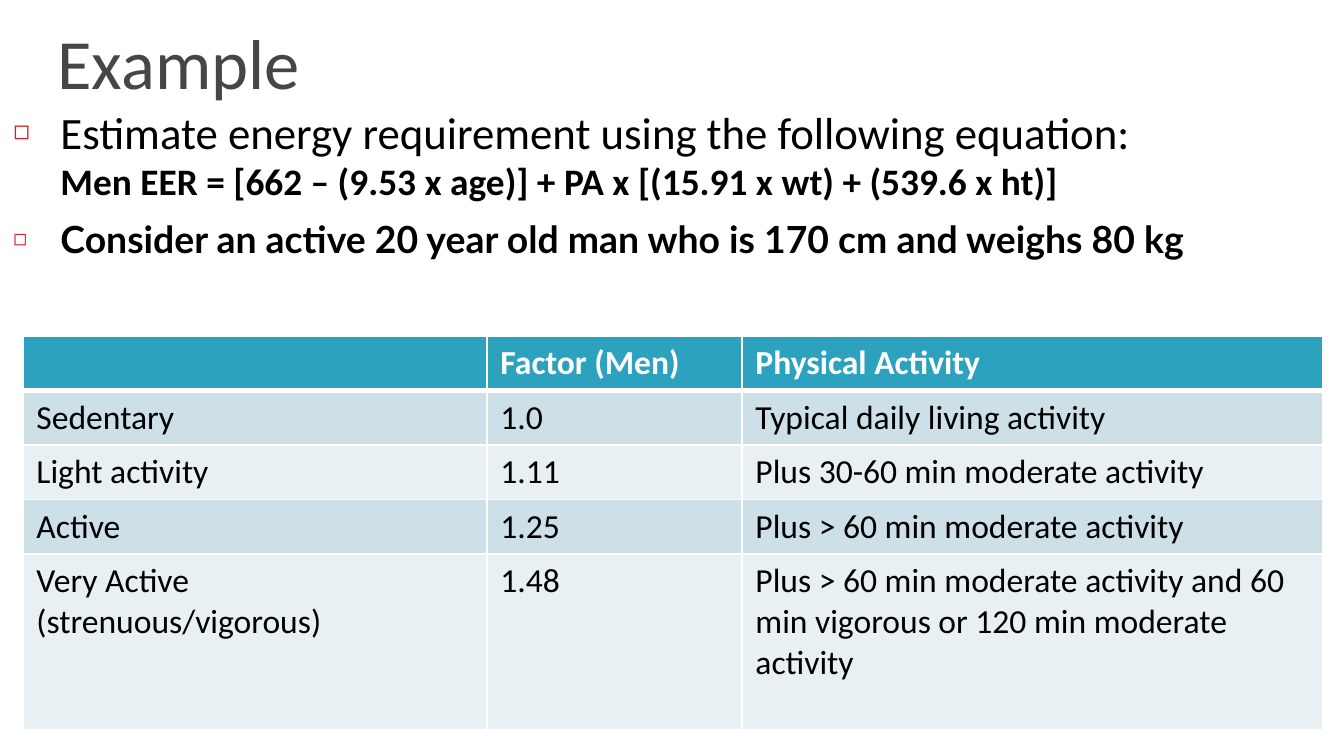
from lxml import etree
from pptx import Presentation, util as u
from pptx.dml.color import RGBColor
from pptx.enum import text
from pptx.oxml.ns import qn

PX = 914400 / 134.4
HEADER, BANDS = "2DA2BF", ("CDE0E8", "E8F0F4")
ROWS = [
    ("", "Factor (Men)", "Physical Activity"),
    ("Sedentary", "1.0", "Typical daily living activity"),
    ("Light activity", "1.11", "Plus 30-60 min moderate activity"),
    ("Active", "1.25", "Plus > 60 min moderate activity"),
    ("Very Active (strenuous/vigorous)", "1.48",
     "Plus > 60 min moderate activity and 60 min vigorous or 120 min moderate activity"),
]
BULLETS = [
    [("Estimate energy requirement using the following equation:",
      dict(size=24, name="Calibri", bold=False)),
     ("Men EER = [662 – (9.53 x age)] + PA x [(15.91 x wt) + (539.6 x ht)]",
      dict(size=20, name="Calibri", bold=True))],
    [("Consider an active 20 year old man who is 170 cm and weighs 80 kg",
      dict(size=20, name="Lato", bold=True))],
]


def px(n):
    """Turn slide pixels into EMU."""
    return u.Emu(round(n * PX))


def rgb(value):
    """Turn a hex string into a colour."""
    return RGBColor.from_string(value)


def add_run(p, words, color="000000", size=18, **fmt):
    """Add a formatted run to a paragraph."""
    r = p.add_run()
    r.text = words
    r.font.color.rgb = rgb(color)
    for key, value in dict(fmt, size=u.Pt(size)).items():
        setattr(r.font, key, value)


def place(sp, left, top, width, height, anchor):
    """Move a placeholder and return its text frame."""
    box = dict(left=left, top=top, width=width, height=height)
    for key, value in box.items():
        setattr(sp, key, px(value))
    tf = sp.text_frame
    frame = dict(word_wrap=True, auto_size=text.MSO_AUTO_SIZE.NONE, vertical_anchor=anchor)
    for key, value in frame.items():
        setattr(tf, key, value)
    return tf


def add_bullet(p):
    """Give a paragraph a hanging red square bullet."""
    pPr = p._p.get_or_add_pPr()
    pPr.set("marL", str(px(47)))
    pPr.set("indent", str(-px(47)))
    color = etree.SubElement(pPr, qn("a:buClr"))
    etree.SubElement(color, qn("a:srgbClr"), val="DA1F28")
    etree.SubElement(pPr, qn("a:buSzPct"), val="60000")
    etree.SubElement(pPr, qn("a:buChar"), char="◻")


def add_title(s):
    """Fill the title placeholder."""
    tf = place(s.shapes.title, 44, 20, 1199, 90, text.MSO_ANCHOR.BOTTOM)
    p = tf.paragraphs[0]
    p.alignment = text.PP_ALIGN.LEFT
    add_run(p, "Example", "464646", 37.8, name="Calibri")


def add_list(s):
    """Fill the body placeholder with the bulleted task."""
    tf = place(s.placeholders[1], 0, 98, 1300, 527, text.MSO_ANCHOR.TOP)
    for i, lines in enumerate(BULLETS):
        p = tf.add_paragraph() if i else tf.paragraphs[0]
        add_bullet(p)
        p.space_before = u.Pt(7 if i else 0)
        for j, (words, fmt) in enumerate(lines):
            if j:
                p.add_line_break()
            add_run(p, words, **fmt)


def add_borders(cell, bottom):
    """Draw white borders around a cell."""
    tcPr = cell._tc.get_or_add_tcPr()
    for i, (side, width) in enumerate(dict(L=1, R=1, T=1, B=bottom).items()):
        ln = etree.Element(qn(f"a:ln{side}"), w=str(u.Pt(width)))
        fill = etree.SubElement(ln, qn("a:solidFill"))
        etree.SubElement(fill, qn("a:srgbClr"), val="FFFFFF")
        tcPr.insert(i, ln)


def add_factor_table(s):
    """Add the table of physical activity factors."""
    widths, heights = (464, 255, 581), (54, 54, 54, 54, 176)
    frame = s.shapes.add_table(len(ROWS), len(widths), px(23), px(336),
                               px(sum(widths)), px(sum(heights)))
    table = frame.table
    for column, width in zip(table.columns, widths):
        column.width = px(width)
    for i, (row, height, words) in enumerate(zip(table.rows, heights, ROWS)):
        row.height = px(height)
        head = i == 0
        for cell, label in zip(row.cells, words):
            cell.fill.solid()
            cell.fill.fore_color.rgb = rgb(HEADER if head else BANDS[(i - 1) % 2])
            add_borders(cell, 3 if head else 1)
            if label:
                add_run(cell.text_frame.paragraphs[0], label,
                        "FFFFFF" if head else "000000", name="Calibri", bold=head)


def main():
    """Build and save the slide."""
    prs = Presentation()
    prs.slide_width, prs.slide_height = px(1344), px(756)
    s = prs.slides.add_slide(prs.slide_layouts[1])
    add_title(s)
    add_list(s)
    add_factor_table(s)
    prs.save("out.pptx")


if __name__ == "__main__":
    main()
